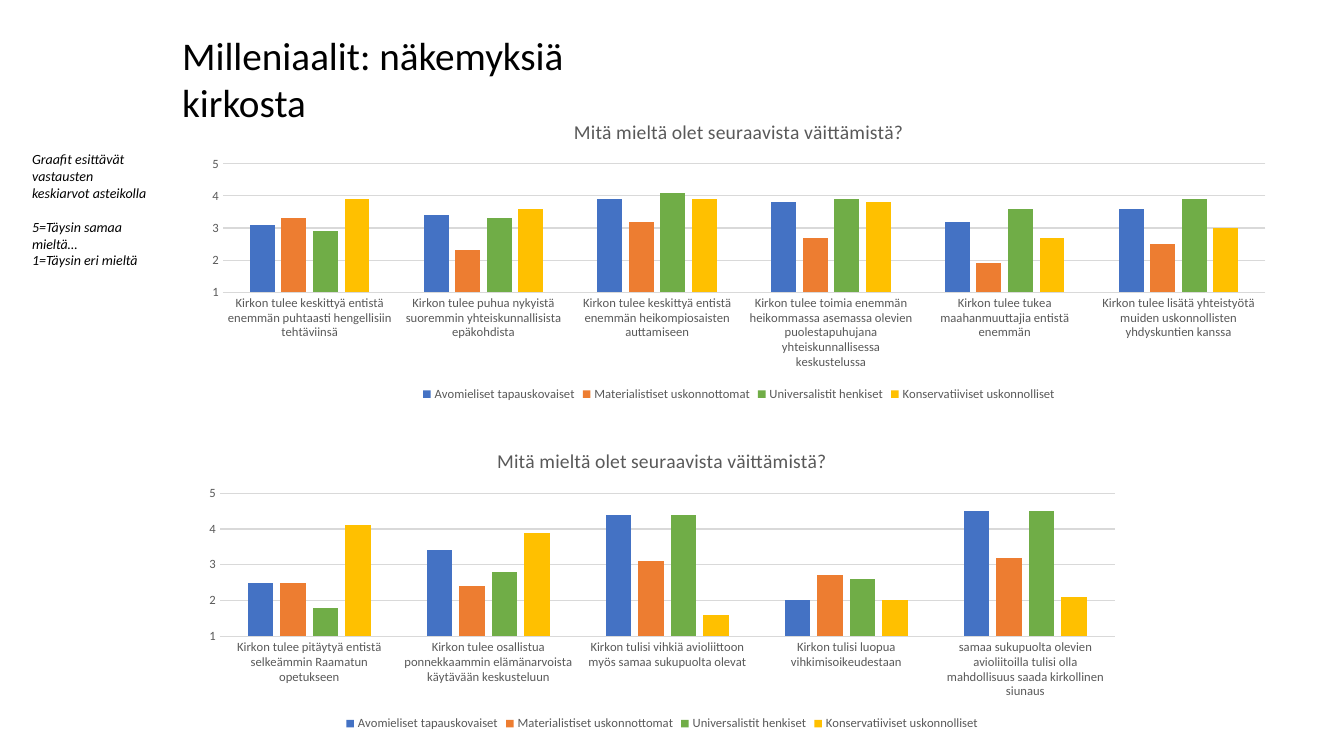
import pptx
import pptx.chart.data
import pptx.dml.color
import pptx.enum.chart
import pptx.enum.text
import pptx.util
from pptx.util import Cm

BLACK = pptx.dml.color.RGBColor(0x00, 0x00, 0x00)
GREY = pptx.dml.color.RGBColor(0x59, 0x59, 0x59)
LIGHT_GREY = pptx.dml.color.RGBColor(0xD9, 0xD9, 0xD9)
BLUE = pptx.dml.color.RGBColor(0x44, 0x72, 0xC4)
ORANGE = pptx.dml.color.RGBColor(0xED, 0x7D, 0x31)
GREEN = pptx.dml.color.RGBColor(0x70, 0xAD, 0x47)
YELLOW = pptx.dml.color.RGBColor(0xFF, 0xC0, 0x00)

FONT = "Calibri"
CHART_TITLE = "Mitä mieltä olet seuraavista väittämistä?"
GROUPS = [
    ("Avomieliset tapauskovaiset", BLUE),
    ("Materialistiset uskonnottomat", ORANGE),
    ("Universalistit henkiset", GREEN),
    ("Konservatiiviset uskonnolliset", YELLOW),
]

# Each statement with its mean per group, in the order of GROUPS
ROLE_STATEMENTS = [
    ("Kirkon tulee keskittyä entistä enemmän puhtaasti hengellisiin tehtäviinsä",
     (3.1, 3.3, 2.9, 3.9)),
    ("Kirkon tulee puhua nykyistä suoremmin yhteiskunnallisista epäkohdista",
     (3.4, 2.3, 3.3, 3.6)),
    ("Kirkon tulee keskittyä entistä enemmän heikompiosaisten auttamiseen",
     (3.9, 3.2, 4.1, 3.9)),
    ("Kirkon tulee toimia enemmän heikommassa asemassa olevien puolestapuhujana "
     "yhteiskunnallisessa keskustelussa", (3.8, 2.7, 3.9, 3.8)),
    ("Kirkon tulee tukea maahanmuuttajia entistä enemmän", (3.2, 1.9, 3.6, 2.7)),
    ("Kirkon tulee lisätä yhteistyötä muiden uskonnollisten yhdyskuntien kanssa",
     (3.6, 2.5, 3.9, 3)),
]
VALUE_STATEMENTS = [
    ("Kirkon tulee pitäytyä entistä selkeämmin Raamatun opetukseen",
     (2.5, 2.5, 1.8, 4.1)),
    ("Kirkon tulee osallistua ponnekkaammin elämänarvoista käytävään keskusteluun",
     (3.4, 2.4, 2.8, 3.9)),
    ("Kirkon tulisi vihkiä avioliittoon myös samaa sukupuolta olevat",
     (4.4, 3.1, 4.4, 1.6)),
    ("Kirkon tulisi luopua vihkimisoikeudestaan", (2, 2.7, 2.6, 2)),
    ("samaa sukupuolta olevien avioliitoilla tulisi olla mahdollisuus saada "
     "kirkollinen siunaus", (4.5, 3.2, 4.5, 2.1)),
]


def style_font(font, size, color, italic=False):
    font.name = FONT
    font.size = pptx.util.Pt(size)
    font.color.rgb = color
    font.bold = False
    font.italic = italic


def add_text(slide, left, top, width, height, lines, size, italic=False):
    """Add a text box; lines holds pairs of text and space before in points."""
    frame = slide.shapes.add_textbox(left, top, width, height).text_frame
    frame.word_wrap = True
    frame.vertical_anchor = pptx.enum.text.MSO_ANCHOR.TOP
    for index, (text, space_before) in enumerate(lines):
        paragraph = frame.paragraphs[0] if index == 0 else frame.add_paragraph()
        if space_before:
            paragraph.space_before = pptx.util.Pt(space_before)
        run = paragraph.add_run()
        run.text = text
        style_font(run.font, size, BLACK, italic)


def style_line(line):
    line.color.rgb = LIGHT_GREY
    line.width = pptx.util.Pt(0.75)


def style_axes(chart):
    for axis in (chart.category_axis, chart.value_axis):
        axis.major_tick_mark = pptx.enum.chart.XL_TICK_MARK.NONE
        axis.minor_tick_mark = pptx.enum.chart.XL_TICK_MARK.NONE
        style_font(axis.tick_labels.font, 9, GREY)
    style_line(chart.category_axis.format.line)

    values = chart.value_axis
    values.minimum_scale = 1
    values.maximum_scale = 5
    values.major_unit = 1
    values.format.line.fill.background()
    values.has_major_gridlines = True
    style_line(values.major_gridlines.format.line)


def add_statement_chart(slide, left, top, width, height, statements):
    data = pptx.chart.data.CategoryChartData()
    data.categories = [statement for statement, means in statements]
    for index, (group, color) in enumerate(GROUPS):
        data.add_series(group, [means[index] for statement, means in statements])
    chart = slide.shapes.add_chart(
        pptx.enum.chart.XL_CHART_TYPE.COLUMN_CLUSTERED,
        left, top, width, height, data).chart
    style_font(chart.font, 10, BLACK)

    # Chart title
    chart.has_title = True
    run = chart.chart_title.text_frame.paragraphs[0].add_run()
    run.text = CHART_TITLE
    style_font(run.font, 14, GREY)
    chart.chart_title.include_in_layout = False

    # Legend
    chart.has_legend = True
    chart.legend.position = pptx.enum.chart.XL_LEGEND_POSITION.BOTTOM
    chart.legend.include_in_layout = False
    style_font(chart.legend.font, 9, GREY)

    # Columns
    plot = chart.plots[0]
    plot.gap_width = 219
    plot.overlap = -27
    plot.vary_by_categories = False
    for series, (group, color) in zip(plot.series, GROUPS):
        series.format.fill.solid()
        series.format.fill.fore_color.rgb = color
        series.invert_if_negative = False

    style_axes(chart)


def main():
    presentation = pptx.Presentation()
    presentation.slide_width = Cm(33.87)
    presentation.slide_height = Cm(19.05)
    slide = presentation.slides.add_slide(presentation.slide_layouts[6])

    # Charts
    add_statement_chart(slide, Cm(4.8), Cm(2.6), Cm(27.64), Cm(7.62), ROLE_STATEMENTS)
    add_statement_chart(slide, Cm(4.8), Cm(10.9), Cm(23.77), Cm(7.62), VALUE_STATEMENTS)

    # Slide title
    add_text(slide, Cm(4.34), Cm(0.66), Cm(13.2), Cm(1.45),
             [("Milleniaalit: näkemyksiä kirkosta", 0)], 28)

    # Key to the scale
    add_text(slide, Cm(0.56), Cm(3.68), Cm(3.38), Cm(3.25),
             [("Graafit esittävät vastausten keskiarvot asteikolla", 0),
              ("5=Täysin samaa mieltä…", 12),
              ("1=Täysin eri mieltä", 0)], 10, italic=True)

    presentation.save("out.pptx")


if __name__ == "__main__":
    main()
